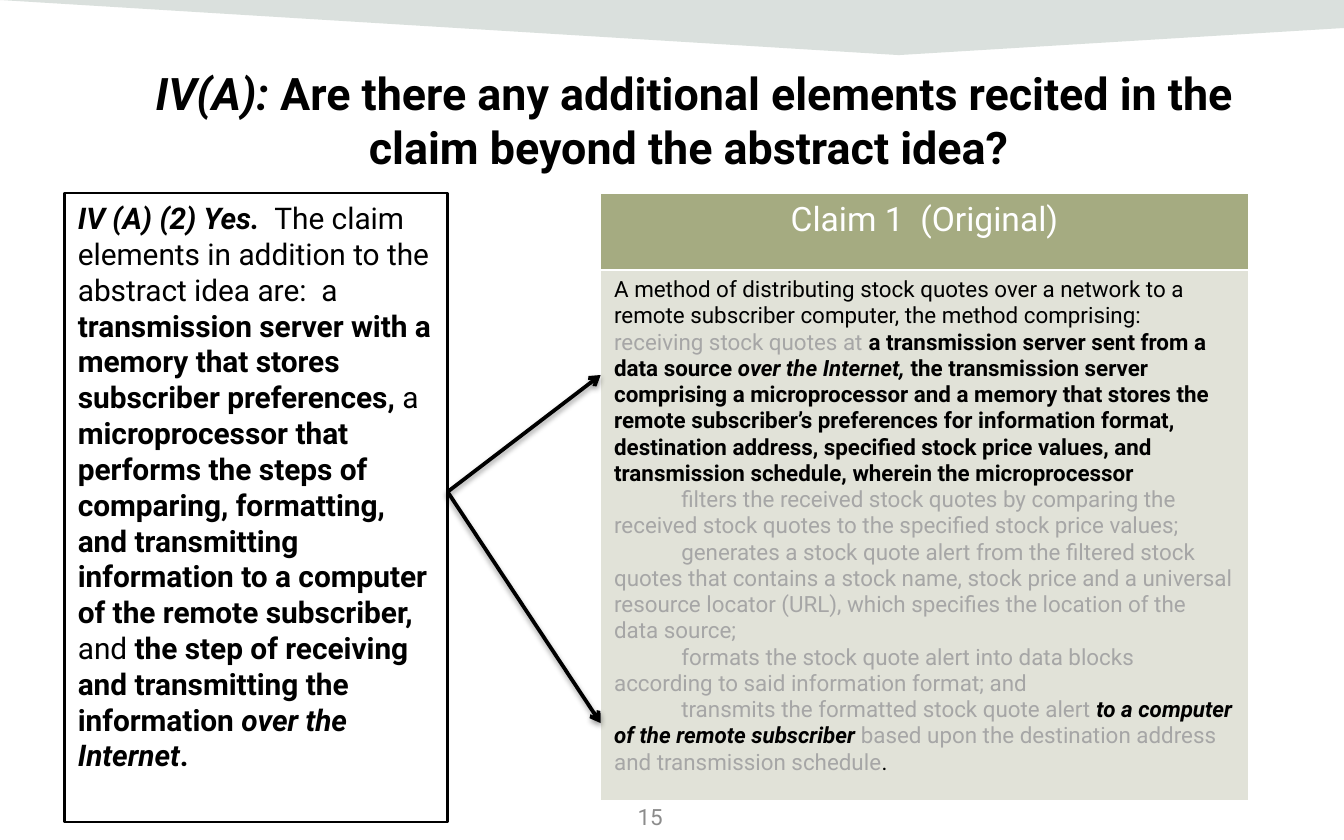
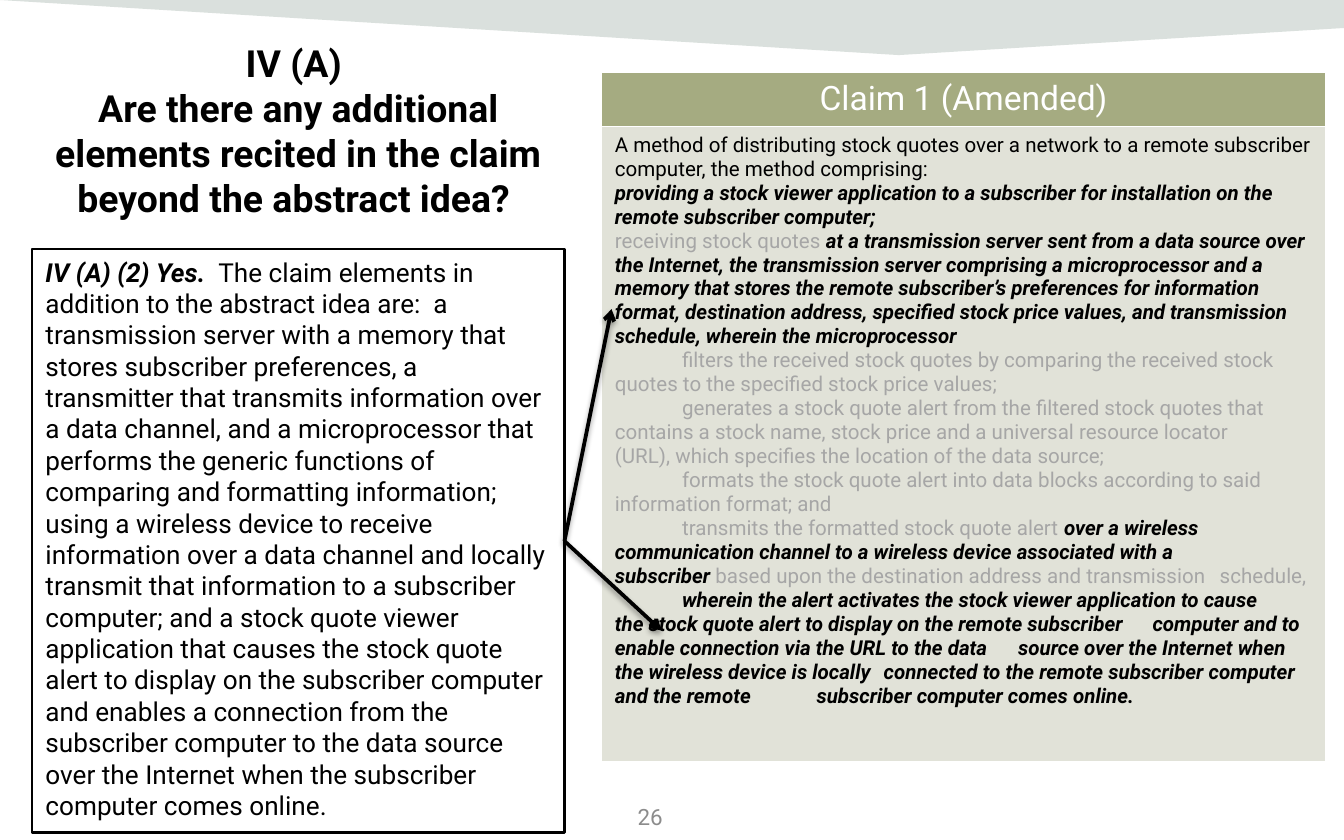
from dataclasses import dataclass

from lxml.etree import SubElement
from pptx import Presentation
from pptx.dml.color import RGBColor
from pptx.enum.shapes import MSO_CONNECTOR, MSO_SHAPE
from pptx.enum.text import MSO_ANCHOR, PP_ALIGN
from pptx.oxml.ns import qn
from pptx.util import Pt

LEFT, CENTER, RIGHT = PP_ALIGN.LEFT, PP_ALIGN.CENTER, PP_ALIGN.RIGHT
TOP, MIDDLE, BOTTOM = MSO_ANCHOR.TOP, MSO_ANCHOR.MIDDLE, MSO_ANCHOR.BOTTOM
RECTANGLE, STRAIGHT = MSO_SHAPE.RECTANGLE, MSO_CONNECTOR.STRAIGHT
RIGHT_SIDE = 3


@dataclass(frozen=True)
class Theme:
    font: str = "Roboto"
    ink: str = "000000"
    paper: str = "FFFFFF"
    muted: str = "A6A6A6"
    number: str = "8C8C8C"
    band: str = "09331C"
    band_opacity: int = 15
    header: str = "A5AB81"
    body: str = "E1E2D8"
    header_size: int = 18
    number_size: int = 12
    outline: float = 1.25
    cell_border: float = 1
    arrow: float = 2
    tab: int = 36


THEME = Theme()
SLIDE_SIZE = (720, 450)
BAND_POINTS = [(0, 0), (720, 0), (720, 15), (481.5, 29.5)]
NUMBER_BOX = (194.4, 425.5, 167.8, 23.8)

PREAMBLE = (False, [("A method of distributing stock quotes over a network to a remote subscriber "
                     "computer, the method comprising:", "")])
SERVER_DETAIL = ("the transmission server comprising a microprocessor and a memory that stores the remote "
                 "subscriber’s preferences for information format, destination address, specified stock "
                 "price values, and transmission schedule, wherein the microprocessor")
FILTER_STEP = (True, [("filters the received stock quotes by comparing the received stock quotes to the "
                       "specified stock price values;", "m")])
FORMAT_STEP = (True, [("formats the stock quote alert into data blocks according to said information "
                       "format; and", "m")])

SLIDES = [
    {
        "number": "15",
        "title": [[("IV(A):", "bi"),
                   (" Are there any additional elements recited in the claim beyond the abstract idea? ", "b")]],
        "title_box": (65.5, 31.7, 612.7, 51.1),
        "title_size": 24,
        "title_anchor": TOP,
        "claim_heading": "Claim 1  (Original)",
        "claim_place": (321.8, 103.7, 347),
        "claim_rows": (41, 284.5),
        "claim_size": 12,
        "claim": [
            PREAMBLE,
            (False, [("receiving stock quotes at ", "m"),
                     ("a transmission server sent from a data source ", "b"),
                     ("over the Internet, ", "bi"),
                     (SERVER_DETAIL, "b")]),
            FILTER_STEP,
            (True, [("generates a stock quote alert from the filtered stock quotes that contains a stock "
                     "name, stock price and a universal resource locator (URL), which specifies the "
                     "location of the data source;", "m")]),
            FORMAT_STEP,
            (True, [("transmits the formatted stock quote alert ", "m"),
                    ("to a computer of the remote subscriber ", "bi"),
                    ("based upon the destination address and transmission schedule", "m"),
                    (".", "")]),
        ],
        "answer_box": (34.6, 103.5, 205.2, 337),
        "answer_size": 16,
        "answer": [
            ("IV (A) (2) Yes.  ", "bi"),
            ("The claim elements in addition to the abstract idea are:  a ", ""),
            ("transmission server with a memory that stores subscriber preferences,", "b"),
            (" a", ""),
            (" microprocessor that performs the steps of comparing, formatting, and transmitting "
             "information to a computer of the remote subscriber, ", "b"),
            ("and ", ""),
            ("the step of receiving and transmitting the information ", "b"),
            ("over the Internet", "bi"),
            (".", "b"),
        ],
        "arrow_start": 263.5,
        "arrow_ends": [(321.8, 200.9), (321.8, 387.4)],
    },
    {
        "number": "26",
        "title": [[("IV (A) ", "b")],
                  [("Are there any additional elements recited in the claim beyond the abstract idea? ", "b")]],
        "title_box": (9.8, 18, 300.2, 103.3),
        "title_size": 20,
        "title_anchor": BOTTOM,
        "claim_heading": "Claim 1 (Amended)",
        "claim_place": (322.2, 38.9, 388),
        "claim_rows": (28, 340.3),
        "claim_size": 11,
        "claim": [
            PREAMBLE,
            (False, [("providing a stock viewer application to a subscriber for installation on the remote "
                      "subscriber computer;", "bi")]),
            (False, [("receiving stock quotes ", "m"),
                     ("at a transmission server sent from a data source over the Internet, "
                      + SERVER_DETAIL, "bi")]),
            FILTER_STEP,
            (True,
             [("generates a stock quote alert from the filtered stock quotes that contains a stock "
               "name, stock price and a universal resource locator", "m")],
             [("(URL), which specifies the location of the data source;", "m")]),
            FORMAT_STEP,
            (True,
             [("transmits the formatted stock quote alert ", "m"),
              ("over a wireless communication channel to a wireless device associated with a", "bi")],
             [("subscriber ", "bi"),
              ("based upon the destination address and transmission \tschedule,", "m")]),
            (True,
             [("wherein the alert activates the stock viewer application to cause", "bi")],
             [("the stock quote alert to display on the remote subscriber \tcomputer and to enable "
               "connection via the URL to the data \tsource over the Internet when the wireless device "
               "is locally \tconnected to the remote subscriber computer and the remote \tsubscriber "
               "computer comes online.", "bi")]),
        ],
        "answer_box": (17.3, 133.6, 285.1, 312.5),
        "answer_size": 14,
        "answer": [
            ("IV (A) (2) Yes.  ", "bi"),
            ("The claim elements in addition to the abstract idea are:  a transmission server with a memory "
             "that stores subscriber preferences, a transmitter that transmits information over a data "
             "channel, and a microprocessor that performs the generic functions of comparing and formatting "
             "information; using a wireless device to receive information over a data channel and locally "
             "transmit that information to a subscriber computer; and a stock quote viewer application that "
             "causes the stock quote alert to display on the subscriber computer and enables a connection "
             "from the subscriber computer to the data source over the Internet when the subscriber computer "
             "comes online.", ""),
        ],
        "arrow_start": None,
        "arrow_ends": [(327.6, 165.6), (354.2, 337.7)],
    },
]


def points(values):
    return [Pt(value) for value in values]


def rgb(color):
    return RGBColor.from_string(color)


def write(paragraph, lines, size, color=THEME.ink, align=LEFT, indented=False, tab_count=0):
    paragraph.alignment = align
    properties = paragraph._p.get_or_add_pPr()
    if indented:
        properties.set("marL", "0")
        properties.set("indent", str(Pt(THEME.tab)))
    if tab_count:
        tabs = SubElement(properties, qn("a:tabLst"))
        for step in range(1, tab_count + 1):
            SubElement(tabs, qn("a:tab"), pos=str(Pt(THEME.tab * step)), algn="l")
    for index, runs in enumerate(lines):
        if index:
            paragraph.add_line_break()
        for text, style in runs:
            run = paragraph.add_run()
            run.text = text
            run.font.name = THEME.font
            run.font.size = Pt(size)
            run.font.bold = "b" in style
            run.font.italic = "i" in style
            run.font.color.rgb = rgb(THEME.muted if "m" in style else color)


def add_text(slide, box, lines, anchor=TOP, **text_format):
    frame = slide.shapes.add_textbox(*points(box)).text_frame
    frame.word_wrap = True
    frame.vertical_anchor = anchor
    write(frame.paragraphs[0], lines, **text_format)


def add_band(slide):
    builder = slide.shapes.build_freeform(*points(BAND_POINTS[0]))
    builder.add_line_segments([points(corner) for corner in BAND_POINTS[1:]], close=True)
    band = builder.convert_to_shape()
    band.shadow.inherit = False
    band.fill.solid()
    band.fill.fore_color.rgb = rgb(THEME.band)
    band.line.fill.background()
    color = band._element.spPr.find(".//" + qn("a:srgbClr"))
    SubElement(color, qn("a:alpha"), val=str(THEME.band_opacity * 1000))


def style_cell(cell, color):
    properties = cell._tc.get_or_add_tcPr()
    for side in "LRTB":
        line = SubElement(properties, qn("a:ln" + side), w=str(Pt(THEME.cell_border)))
        fill = SubElement(line, qn("a:solidFill"))
        SubElement(fill, qn("a:srgbClr"), val=THEME.paper)
    cell.fill.solid()
    cell.fill.fore_color.rgb = rgb(color)


def add_claim(slide, content):
    rows = content["claim_rows"]
    place = (*content["claim_place"], sum(rows))
    table = slide.shapes.add_table(len(rows), 1, *points(place)).table
    table.horz_banding = False
    for row, height in zip(table.rows, rows):
        row.height = Pt(height)
    heading, body = table.cell(0, 0), table.cell(1, 0)
    style_cell(heading, THEME.header)
    style_cell(body, THEME.body)
    write(heading.text_frame.paragraphs[0], [[(content["claim_heading"], "")]],
          size=THEME.header_size, color=THEME.paper, align=CENTER)
    tab_count = int(place[2] // THEME.tab)
    frame = body.text_frame
    for index, (indented, *lines) in enumerate(content["claim"]):
        paragraph = frame.add_paragraph() if index else frame.paragraphs[0]
        has_tabs = any("\t" in text for runs in lines for text, style in runs)
        write(paragraph, lines, size=content["claim_size"], indented=indented,
              tab_count=tab_count if has_tabs else 0)


def add_answer(slide, content):
    answer = slide.shapes.add_shape(RECTANGLE, *points(content["answer_box"]))
    answer.shadow.inherit = False
    answer.fill.solid()
    answer.fill.fore_color.rgb = rgb(THEME.paper)
    answer.line.color.rgb = rgb(THEME.ink)
    answer.line.width = Pt(THEME.outline)
    answer.text_frame.word_wrap = True
    answer.text_frame.vertical_anchor = TOP
    write(answer.text_frame.paragraphs[0], [content["answer"]], size=content["answer_size"])
    return answer


def add_arrow(slide, answer, start, end):
    begin_y = answer.top + answer.height // 2 if start is None else Pt(start)
    arrow = slide.shapes.add_connector(STRAIGHT, answer.left + answer.width, begin_y, *points(end))
    if start is None:
        arrow.begin_connect(answer, RIGHT_SIDE)
    arrow.line.color.rgb = rgb(THEME.ink)
    arrow.line.width = Pt(THEME.arrow)
    SubElement(arrow.line._get_or_add_ln(), qn("a:tailEnd"), type="arrow")
    effects = SubElement(arrow._element.spPr, qn("a:effectLst"))
    shadow = SubElement(effects, qn("a:outerShdw"), blurRad=str(Pt(3.1)), dist=str(Pt(1.6)),
                        dir="5400000", rotWithShape="0")
    color = SubElement(shadow, qn("a:srgbClr"), val=THEME.ink)
    SubElement(color, qn("a:alpha"), val="38000")


def build_slide(presentation, content):
    slide = presentation.slides.add_slide(presentation.slide_layouts[6])
    add_band(slide)
    add_text(slide, content["title_box"], content["title"], anchor=content["title_anchor"],
             size=content["title_size"], align=CENTER)
    add_text(slide, NUMBER_BOX, [[(content["number"], "")]], anchor=MIDDLE,
             size=THEME.number_size, color=THEME.number, align=RIGHT)
    add_claim(slide, content)
    answer = add_answer(slide, content)
    for end in content["arrow_ends"]:
        add_arrow(slide, answer, content["arrow_start"], end)


def main():
    presentation = Presentation()
    presentation.slide_width, presentation.slide_height = points(SLIDE_SIZE)
    for content in SLIDES:
        build_slide(presentation, content)
    presentation.save("out.pptx")


if __name__ == "__main__":
    main()
